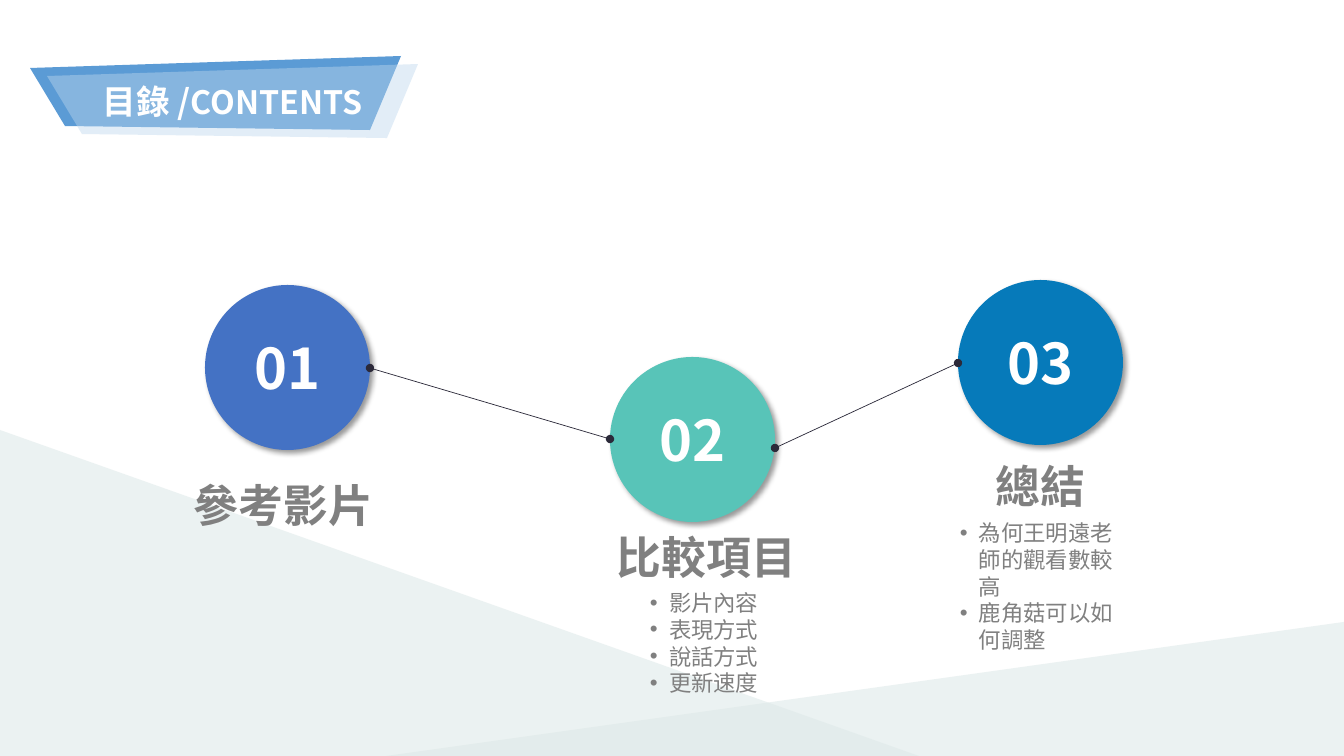
from dataclasses import dataclass

from lxml import etree
from pptx import Presentation
from pptx.dml.color import RGBColor
from pptx.enum.shapes import MSO_CONNECTOR, MSO_SHAPE
from pptx.enum.text import MSO_ANCHOR, MSO_AUTO_SIZE, PP_ALIGN
from pptx.oxml.ns import qn
from pptx.util import Emu, Pt

EMU_PER_PX = 914400 / 100.8
FONT = "Noto Sans CJK TC"
WHITE, GREY, INK, MIST = "FFFFFF", "808080", "2B2939", "DDE9E8"
LEFT, CENTER = PP_ALIGN.LEFT, PP_ALIGN.CENTER
TOP, MIDDLE = MSO_ANCHOR.TOP, MSO_ANCHOR.MIDDLE
NO_FIT, GROW = MSO_AUTO_SIZE.NONE, MSO_AUTO_SIZE.SHAPE_TO_FIT_TEXT
ELLIPSE, TRIANGLE = MSO_SHAPE.OVAL, MSO_SHAPE.RIGHT_TRIANGLE
STRAIGHT = MSO_CONNECTOR.STRAIGHT
TITLE_ONLY = 5
BULLET_INDENT = 19


@dataclass
class Box:
    left: int
    top: int
    width: int
    height: int


@dataclass
class Hill:
    box: Box
    flipped: bool


@dataclass
class Ribbon:
    offset_x: int
    offset_y: int
    color: str
    opacity: int


@dataclass
class Step:
    number: str
    left: int
    top: int
    color: str


@dataclass
class Link:
    start_x: int
    start_y: int
    end_x: int
    end_y: int


@dataclass
class Caption:
    box: Box
    lines: list[str]
    size: int = 32
    align: int = LEFT
    bulleted: bool = False


DIAMETER = 165
RIBBON_OUTLINE = [(30, 68), (65, 126), (370, 130), (401, 56)]
TITLE_BOX = Box(47, 65, 372, 73)

HILLS = [
    Hill(Box(386, 621, 965, 135), True),
    Hill(Box(0, 430, 919, 326), False),
]
RIBBONS = [Ribbon(0, 0, "5B9BD5", 100), Ribbon(17, 8, "BDD7EE", 44)]
STEPS = [
    Step("01", 205, 285, "4472C4"),
    Step("02", 610, 357, "58C4B8"),
    Step("03", 958, 280, "067ABA"),
]
LINKS = [Link(370, 368, 610, 439), Link(775, 448, 958, 363)]
CAPTIONS = [
    Caption(Box(194, 478, 188, 54), ["參考影片"]),
    Caption(Box(617, 530, 181, 54), ["比較項目"]),
    Caption(Box(982, 459, 117, 54), ["總結"], align=CENTER),
    Caption(Box(650, 589, 114, 109),
            ["影片內容", "表現方式", "說話方式", "更新速度"], 16, bulleted=True),
    Caption(Box(960, 519, 160, 136),
            ["為何王明遠老師的觀看數較高", "鹿角菇可以如何調整"], 16, bulleted=True),
]


def px(value: int) -> Emu:
    return Emu(round(value * EMU_PER_PX))


def place(box: Box) -> list[Emu]:
    return [px(value) for value in (box.left, box.top, box.width, box.height)]


def paint(color_format, color: str) -> None:
    color_format.rgb = RGBColor.from_string(color)


def fill_shape(shape, color: str, opacity: int = 100) -> None:
    shape.shadow.inherit = False
    shape.line.fill.background()
    shape.fill.solid()
    paint(shape.fill.fore_color, color)
    if opacity < 100:
        color_element = shape.element.spPr.find(qn("a:solidFill"))[0]
        etree.SubElement(color_element, qn("a:alpha"), val=str(opacity * 1000))


def set_frame(text_frame, anchor: int, margin_x: int = 0, margin_y: int = 0) -> None:
    text_frame.word_wrap = True
    text_frame.vertical_anchor = anchor
    text_frame.margin_left = text_frame.margin_right = px(margin_x)
    text_frame.margin_top = text_frame.margin_bottom = px(margin_y)


def format_run(run, size: int, color: str, bold: bool) -> None:
    run.font.name = FONT
    run.font.size = Pt(size)
    run.font.bold = bold
    paint(run.font.color, color)
    etree.SubElement(run.font._element, qn("a:ea"), typeface=FONT)


def add_bullet(paragraph) -> None:
    properties = paragraph._p.get_or_add_pPr()
    properties.set("marL", str(px(BULLET_INDENT)))
    properties.set("indent", str(-px(BULLET_INDENT)))
    etree.SubElement(properties, qn("a:buFont"), typeface="Arial")
    etree.SubElement(properties, qn("a:buChar"), char="•")


def add_hill(slide, hill: Hill) -> None:
    shape = slide.shapes.add_shape(TRIANGLE, *place(hill.box))
    fill_shape(shape, MIST, 56)
    if hill.flipped:
        shape.element.spPr.find(qn("a:xfrm")).set("flipH", "1")


def add_ribbon(group, ribbon: Ribbon) -> None:
    points = [(x + ribbon.offset_x, y + ribbon.offset_y) for x, y in RIBBON_OUTLINE]
    builder = group.shapes.build_freeform(*points[0], scale=EMU_PER_PX)
    builder.add_line_segments(points[1:], close=True)
    fill_shape(builder.convert_to_shape(), ribbon.color, ribbon.opacity)


def set_title(slide) -> None:
    title = slide.shapes.title
    title.left, title.top, title.width, title.height = place(TITLE_BOX)
    title.element.getparent().append(title.element)
    set_frame(title.text_frame, MIDDLE)
    title.text_frame.auto_size = NO_FIT
    title.text_frame.text = "目錄 /"
    paragraph = title.text_frame.paragraphs[0]
    paragraph.alignment = CENTER
    paragraph.add_run().text = "CONTENTS"
    for run, size in zip(paragraph.runs, (24, 23)):
        format_run(run, size, WHITE, True)


def add_step(slide, step: Step) -> None:
    box = Box(step.left, step.top, DIAMETER, DIAMETER)
    shape = slide.shapes.add_shape(ELLIPSE, *place(box))
    fill_shape(shape, step.color)
    effects = shape.element.spPr.find(qn("a:effectLst"))
    shadow = etree.SubElement(effects, qn("a:outerShdw"), blurRad=str(Pt(4)),
                              dist=str(Pt(3)), dir="2700000", algn="tl", rotWithShape="0")
    color = etree.SubElement(shadow, qn("a:srgbClr"), val="000000")
    etree.SubElement(color, qn("a:alpha"), val="40000")
    set_frame(shape.text_frame, MIDDLE, 7, 4)
    shape.text_frame.text = step.number
    paragraph = shape.text_frame.paragraphs[0]
    paragraph.alignment = CENTER
    format_run(paragraph.runs[0], 40, WHITE, True)


def add_link(slide, link: Link) -> None:
    ends = [px(value) for value in (link.start_x, link.start_y, link.end_x, link.end_y)]
    connector = slide.shapes.add_connector(STRAIGHT, *ends)
    connector.line.width = Pt(0.5)
    paint(connector.line.color, INK)
    properties = connector.element.spPr
    for end in ("a:headEnd", "a:tailEnd"):
        etree.SubElement(properties.find(qn("a:ln")), qn(end), type="oval")
    etree.SubElement(properties, qn("a:effectLst"))


def add_caption(slide, caption: Caption) -> None:
    text_frame = slide.shapes.add_textbox(*place(caption.box)).text_frame
    set_frame(text_frame, MIDDLE if caption.align == CENTER else TOP)
    text_frame.auto_size = GROW
    text_frame.text = "\n".join(caption.lines)
    for paragraph in text_frame.paragraphs:
        paragraph.alignment = caption.align
        paragraph.line_spacing = Pt(caption.size * 1.2)
        if caption.bulleted:
            add_bullet(paragraph)
        format_run(paragraph.runs[0], caption.size, GREY, not caption.bulleted)


def main() -> None:
    presentation = Presentation()
    presentation.slide_width, presentation.slide_height = px(1344), px(756)
    slide = presentation.slides.add_slide(presentation.slide_layouts[TITLE_ONLY])
    for hill in HILLS:
        add_hill(slide, hill)
    group = slide.shapes.add_group_shape()
    for ribbon in RIBBONS:
        add_ribbon(group, ribbon)
    set_title(slide)
    for step in STEPS:
        add_step(slide, step)
    for link in LINKS:
        add_link(slide, link)
    for caption in CAPTIONS:
        add_caption(slide, caption)
    presentation.save("out.pptx")


if __name__ == "__main__":
    main()
